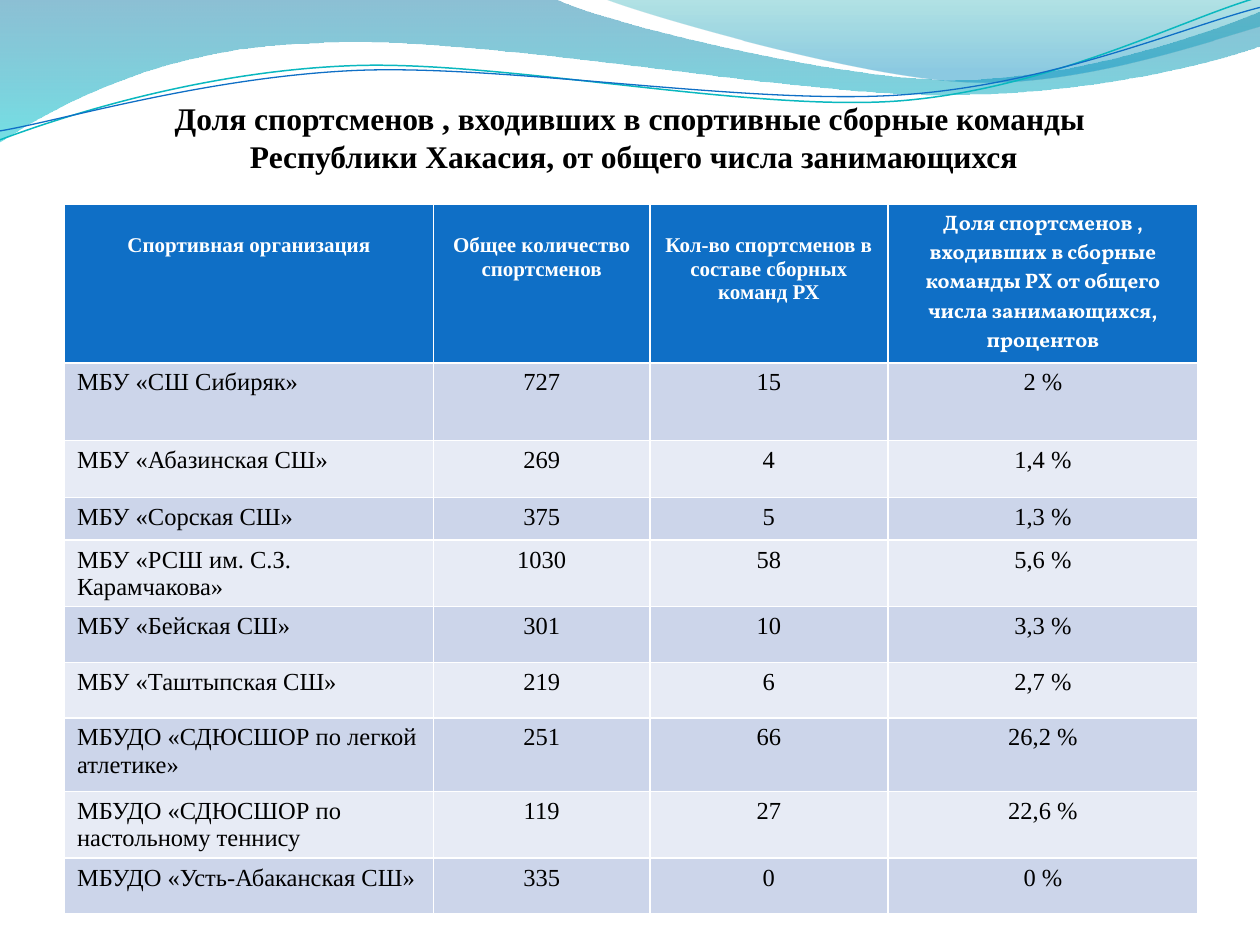
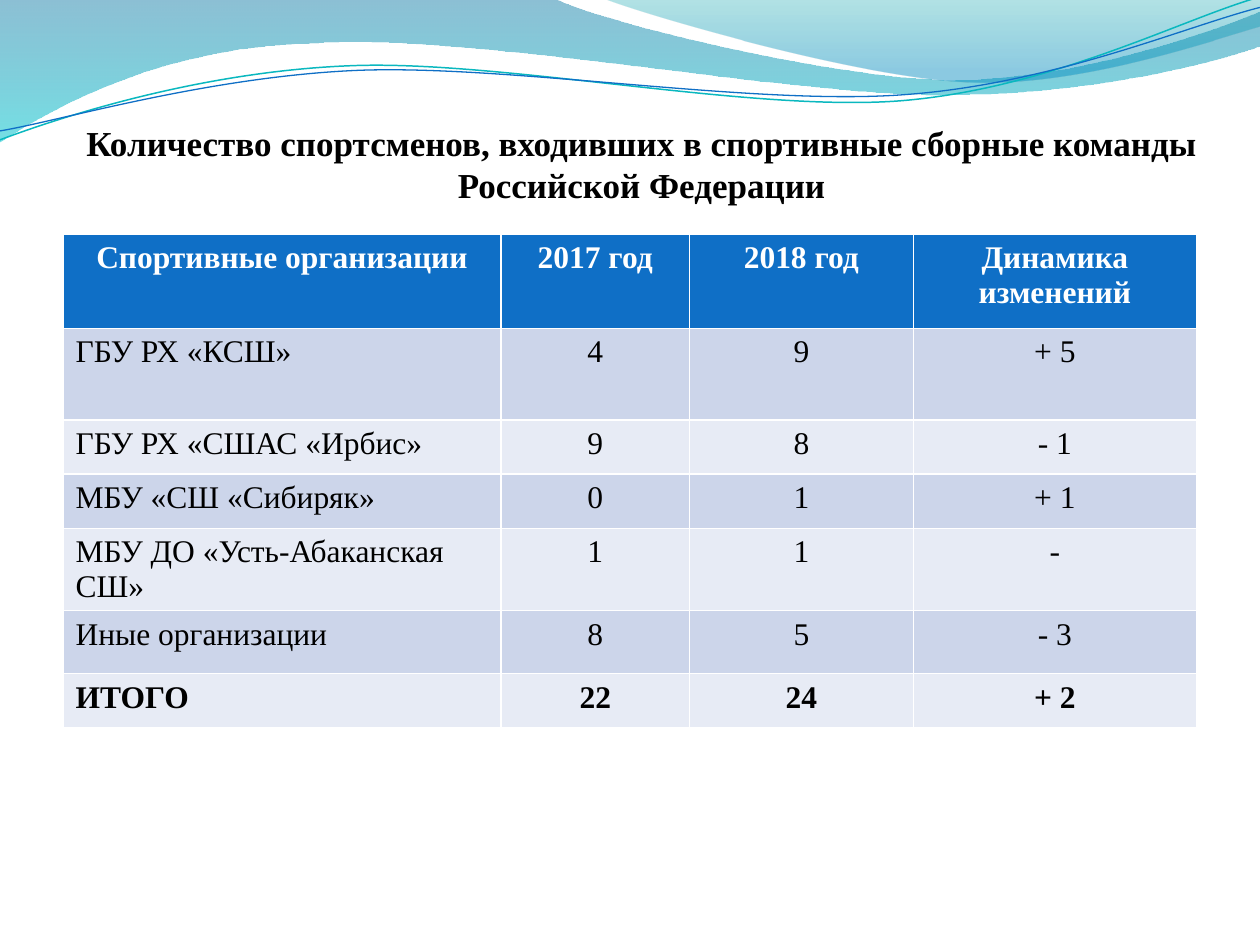
"""Two slides of athlete statistics: a wave header, a title and a table on each."""
from dataclasses import dataclass
from typing import Any, Optional

from lxml import etree
from pptx import Presentation
from pptx.dml.color import RGBColor
from pptx.enum.text import MSO_ANCHOR, MSO_AUTO_SIZE, PP_ALIGN
from pptx.oxml.ns import qn
from pptx.util import Cm, Pt

LEFT, CENTER = PP_ALIGN.LEFT, PP_ALIGN.CENTER
BOTTOM = MSO_ANCHOR.BOTTOM
NO_FIT = MSO_AUTO_SIZE.NONE
TITLE_ONLY = 5

Point = tuple[float, float]


@dataclass(frozen=True)
class Theme:
    font: str = "Times New Roman"
    accent_font: str = "Vollkorn"
    ink: str = "000000"
    white: str = "FFFFFF"
    blue: str = "0F6FC6"
    teal: str = "0AB8BF"
    bands: tuple[str, str] = ("CCD5EA", "E7EBF5")
    line_tilt: float = 357.3


@dataclass(frozen=True)
class Stop:
    position: float
    color: str
    opacity: int


@dataclass(frozen=True)
class Wave:
    start: Point
    segments: tuple[tuple[Point, ...], ...]
    stops: tuple[Stop, ...] = ()
    line: str = ""
    width: float = 0


@dataclass(frozen=True)
class StatsSlide:
    title: tuple[str, ...]
    title_box: tuple[float, ...]
    title_size: int
    table_at: Point
    table_height: float
    cols: tuple[float, ...]
    heights: tuple[float, ...]
    head_size: int
    body_size: int
    rows: tuple[tuple[str, ...], ...]
    head_top: float = 0.13
    accent_col: Optional[int] = None
    has_total: bool = False


THEME = Theme()

WAVES = (
    Wave((0, 0), (
        ((11.18, -0.03),),
        ((12.09, 0.43), (16.87, 1.6), (19.25, 1.6)),
        ((21.67, 1.6), (24.33, 0.66), (25.4, 0.23)),
        ((25.43, 0.91),),
        ((24.97, 1.12), (22.1, 1.93), (18.95, 1.91)),
        ((15.8, 1.91), (9.7, 0.71), (6.53, 0.86)),
        ((3.28, 0.91), (1.17, 2.11), (-0.03, 2.87)),
        ((0, 0),),
    ), stops=(Stop(0, "0074A1", 45), Stop(1, "00C6CF", 55))),
    Wave((12.17, -0.03), (
        ((12.93, 0.28), (17.32, 1.57), (19.53, 1.65)),
        ((21.74, 1.75), (24.41, 0.81), (25.4, 0.53)),
        ((25.4, 0),),
        ((12.17, -0.03),),
    ), stops=(Stop(0, "00A1A9", 30), Stop(0.8, "008BBF", 45))),
    Wave((-0.05, 2.22), (
        ((1.19, 1.82), (4.02, 1.04), (7.05, 1.06)),
        ((10.05, 1.07), (15.02, 2.37), (18.08, 2.29)),
        ((21.13, 2.2), (23.87, 0.91), (25.41, 0.55)),
    ), line=THEME.teal, width=0.85),
    Wave((-0.04, 2.04), (
        ((1.16, 1.9), (4.18, 1.15), (7.2, 1.16)),
        ((10.25, 1.18), (15.13, 2.25), (18.18, 2.17)),
        ((21.21, 2.1), (23.93, 1.06), (25.45, 0.75)),
    ), line=THEME.blue, width=0.75),
)

SLIDES = (
    StatsSlide(
        title=("Доля спортсменов , входивших в спортивные сборные команды",
               " Республики Хакасия, от общего числа занимающихся"),
        title_box=(1.27, 1.96, 22.86, 1.57), title_size=18,
        table_at=(1.3, 4.12), table_height=14.1,
        cols=(7.44, 4.36, 4.8, 6.25),
        heights=(1.93, 1.57, 1.14, 0.86, 0.86, 1.12, 1.12, 1.48, 1.12, 1.12),
        head_size=12, body_size=14, head_top=0.6, accent_col=3,
        rows=(
            ("Спортивная организация", "Общее количество спортсменов",
             "Кол-во спортсменов в составе сборных команд РХ",
             "Доля спортсменов , входивших в сборные команды РХ "
             "от общего числа занимающихся, процентов"),
            ("МБУ «СШ Сибиряк»", "727", "15", "2 %"),
            ("МБУ «Абазинская СШ»", "269", "4", "1,4 %"),
            ("МБУ «Сорская СШ»", "375", "5", "1,3 %"),
            ("МБУ «РСШ им. С.З. Карамчакова»", "1030", "58", "5,6 %"),
            ("МБУ «Бейская СШ»", "301", "10", "3,3 %"),
            ("МБУ «Таштыпская СШ»", "219", "6", "2,7 %"),
            ("МБУДО «СДЮСШОР по легкой атлетике»", "251", "66", "26,2 %"),
            ("МБУДО «СДЮСШОР по настольному теннису", "119", "27", "22,6 %"),
            ("МБУДО «Усть-Абаканская СШ»", "335", "0", "0 %"),
        )),
    StatsSlide(
        title=("Количество спортсменов, входивших в спортивные сборные "
               "команды Российской Федерации",),
        title_box=(1.3, 2.13, 23.27, 2.01), title_size=20,
        table_at=(1.27, 4.72), table_height=10.08,
        cols=(8.83, 3.8, 4.51, 5.71),
        heights=(1.9, 1.85, 1.09, 1.09, 1.09, 1.27, 1.09),
        head_size=18, body_size=18, has_total=True,
        rows=(
            ("Спортивные организации", "2017 год", "2018 год",
             "Динамика изменений"),
            ("ГБУ РХ «КСШ»", "4", "9", "+ 5"),
            ("ГБУ РХ «СШАС «Ирбис»", "9", "8", "- 1"),
            ("МБУ «СШ «Сибиряк»", "0", "1", "+ 1"),
            ("МБУ ДО «Усть-Абаканская СШ»", "1", "1", "-"),
            ("Иные организации", "8", "5", "- 3"),
            ("ИТОГО", "22", "24", "+ 2"),
        )),
)


def set_attrs(target: Any, values: dict[str, Any]) -> None:
    for name, value in values.items():
        setattr(target, name, value)


def set_font(font: Any, size: int, color: str, bold: bool,
             name: str = THEME.font) -> None:
    set_attrs(font, {"name": name, "size": Pt(size), "bold": bold})
    font.color.rgb = RGBColor.from_string(color)


def bend_segments(sp: Any, wave: Wave) -> None:
    lines = iter(list(sp.element.iter(qn("a:lnTo"))))
    for segment in wave.segments:
        group = [next(lines) for _ in segment]
        if len(group) == 1:
            continue
        curve = etree.Element(qn("a:cubicBezTo"))
        group[0].addprevious(curve)
        for line in group:
            curve.append(line[0])
            line.getparent().remove(line)


def draw_wave(shapes: Any, wave: Wave) -> Any:
    builder = shapes.build_freeform(*(Cm(v) for v in wave.start))
    points = [(Cm(x), Cm(y)) for segment in wave.segments for x, y in segment]
    builder.add_line_segments(points, close=bool(wave.stops))
    sp = builder.convert_to_shape()
    bend_segments(sp, wave)
    sp.shadow.inherit = False
    if not wave.stops:
        sp.rotation = THEME.line_tilt
        sp.fill.background()
        sp.line.color.rgb = RGBColor.from_string(wave.line)
        sp.line.width = Pt(wave.width)
        return sp
    sp.line.fill.background()
    sp.fill.gradient()
    sp.fill.gradient_angle = 270
    for target, stop in zip(sp.fill.gradient_stops, wave.stops):
        target.position = stop.position
        target.color.rgb = RGBColor.from_string(stop.color)
    for color, stop in zip(sp.element.iter(qn("a:srgbClr")), wave.stops):
        etree.SubElement(color, qn("a:alpha"), val=str(stop.opacity * 1000))
    return sp


def add_waves_to_master(prs: Any, shapes: Any) -> None:
    for wave in WAVES:
        sp = draw_wave(shapes, wave)
        prs.slide_master.shapes.element.append(sp.element)


def format_title(sp: Any, data: StatsSlide) -> None:
    box = (Cm(v) for v in data.title_box)
    set_attrs(sp, dict(zip(("left", "top", "width", "height"), box)))
    tf = sp.text_frame
    set_attrs(tf, {"word_wrap": True, "auto_size": NO_FIT,
                   "vertical_anchor": BOTTOM, "margin_left": 0,
                   "margin_top": Cm(0.13), "margin_right": 0,
                   "margin_bottom": 0})
    p = tf.paragraphs[0]
    p.alignment = CENTER
    for i, line in enumerate(data.title):
        if i:
            p.add_line_break()
        r = p.add_run()
        r.text = line
        set_font(r.font, data.title_size, THEME.ink, True)


def add_stats_table(shapes: Any, data: StatsSlide) -> None:
    left, top = data.table_at
    frame = shapes.add_table(len(data.rows), len(data.cols), Cm(left), Cm(top),
                             Cm(sum(data.cols)), Cm(data.table_height))
    table = frame.table
    for column, width in zip(table.columns, data.cols):
        column.width = Cm(width)
    for row, height in zip(table.rows, data.heights):
        row.height = Cm(height)
    frame.height = Cm(data.table_height)
    last = len(data.rows) - 1
    for i, texts in enumerate(data.rows):
        head = i == 0
        bold = head or (data.has_total and i == last)
        for j, text in enumerate(texts):
            cell = table.cell(i, j)
            accent = head and j == data.accent_col
            cell.fill.solid()
            fill = THEME.blue if head else THEME.bands[(i - 1) % 2]
            cell.fill.fore_color.rgb = RGBColor.from_string(fill)
            if head and not accent:
                cell.margin_top = Cm(data.head_top)
            p = cell.text_frame.paragraphs[0]
            p.alignment = CENTER if head or j else LEFT
            r = p.add_run()
            r.text = text
            set_font(r.font, data.head_size if head else data.body_size,
                     THEME.white if head else THEME.ink, bold,
                     THEME.accent_font if accent else THEME.font)


def main() -> None:
    prs = Presentation()
    set_attrs(prs, {"slide_width": Cm(25.4), "slide_height": Cm(19.05)})
    for i, data in enumerate(SLIDES):
        slide = prs.slides.add_slide(prs.slide_layouts[TITLE_ONLY])
        if i == 0:
            add_waves_to_master(prs, slide.shapes)
        format_title(slide.shapes.title, data)
        add_stats_table(slide.shapes, data)
    prs.save("out.pptx")


if __name__ == "__main__":
    main()
